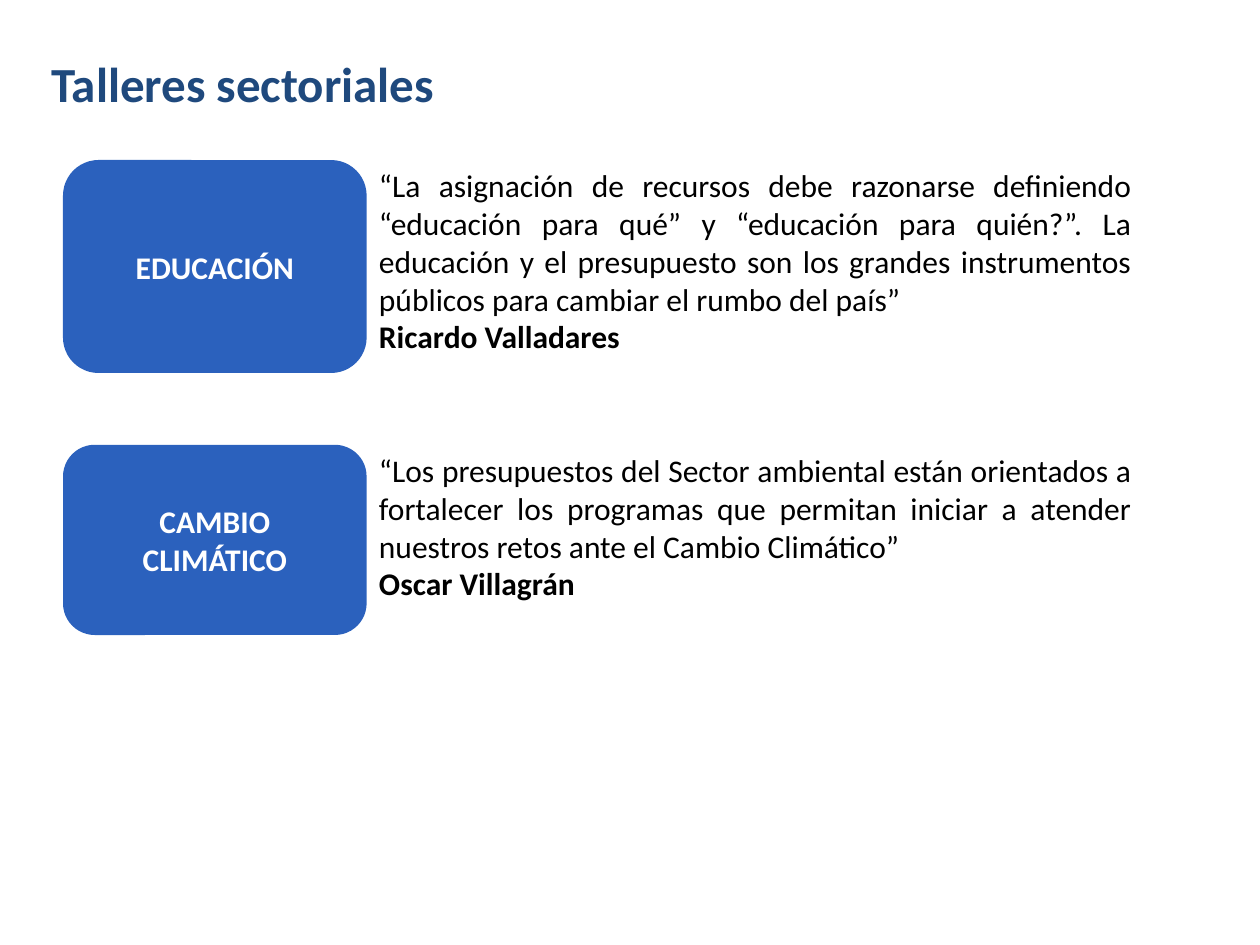
from dataclasses import dataclass

from pptx import Presentation
from pptx.dml.color import RGBColor
from pptx.enum.shapes import MSO_SHAPE
from pptx.enum.text import MSO_ANCHOR, MSO_AUTO_SIZE, PP_ALIGN
from pptx.util import Inches, Pt

ROUNDED = MSO_SHAPE.ROUNDED_RECTANGLE
MIDDLE, TOP = MSO_ANCHOR.MIDDLE, MSO_ANCHOR.TOP
LEFT, CENTER, JUSTIFY = PP_ALIGN.LEFT, PP_ALIGN.CENTER, PP_ALIGN.JUSTIFY
GROW = MSO_AUTO_SIZE.SHAPE_TO_FIT_TEXT


@dataclass(frozen=True)
class Theme:
    font: str = "Calibri"
    title_color: RGBColor = RGBColor(0x1F, 0x49, 0x7D)
    sector_fill: RGBColor = RGBColor(0x2B, 0x61, 0xBD)
    sector_text: RGBColor = RGBColor(0xFF, 0xFF, 0xFF)
    quote_color: RGBColor = RGBColor(0, 0, 0)
    title_size: Pt = Pt(28)
    body_size: Pt = Pt(18)


THEME = Theme()
SECTOR_LEFT, SECTOR_WIDTH = 0.5, 2.41
QUOTE_LEFT, QUOTE_WIDTH = SECTOR_LEFT + SECTOR_WIDTH, 6.17

WORKSHOPS = [
    {
        "sector": "EDUCACIÓN",
        "top": 1.27,
        "sector_height": 1.69,
        "quote_height": 1.62,
        "quote": "“La asignación de recursos debe razonarse definiendo "
                 "“educación para qué” y “educación para quién?”. La educación "
                 "y el presupuesto son los grandes instrumentos públicos para "
                 "cambiar el rumbo del país”",
        "speaker": "Ricardo Valladares",
    },
    {
        "sector": "CAMBIO CLIMÁTICO",
        "top": 3.53,
        "sector_height": 1.51,
        "quote_height": 1.31,
        "quote": "“Los presupuestos del Sector ambiental están orientados a "
                 "fortalecer los programas que permitan iniciar a atender "
                 "nuestros retos ante el Cambio Climático”",
        "speaker": "Oscar Villagrán",
    },
]


def write_text(shape, lines, size, color, alignment, anchor):
    frame = shape.text_frame
    frame.word_wrap = True
    frame.vertical_anchor = anchor
    frame.text = "\n".join(text for text, bold in lines)
    for paragraph, (text, bold) in zip(frame.paragraphs, lines):
        paragraph.alignment = alignment
        font = paragraph.runs[0].font
        font.color.rgb = color
        formats = {"name": THEME.font, "size": size, "bold": bold}
        for name, value in formats.items():
            setattr(font, name, value)


def add_title(slide, text):
    box = slide.shapes.add_textbox(
        Inches(0.31), Inches(0), Inches(5.21), Inches(1.32))
    write_text(box, [(text, True)], THEME.title_size, THEME.title_color,
               LEFT, MIDDLE)


def add_sector(slide, workshop):
    shape = slide.shapes.add_shape(
        ROUNDED, Inches(SECTOR_LEFT), Inches(workshop["top"]),
        Inches(SECTOR_WIDTH), Inches(workshop["sector_height"]))
    shape.shadow.inherit = False
    shape.fill.solid()
    shape.fill.fore_color.rgb = THEME.sector_fill
    shape.line.fill.background()
    write_text(shape, [(workshop["sector"], True)], THEME.body_size,
               THEME.sector_text, CENTER, MIDDLE)


def add_quote(slide, workshop):
    box = slide.shapes.add_textbox(
        Inches(QUOTE_LEFT), Inches(workshop["top"]),
        Inches(QUOTE_WIDTH), Inches(workshop["quote_height"]))
    lines = [(workshop["quote"], False), (workshop["speaker"], True)]
    write_text(box, lines, THEME.body_size, THEME.quote_color, JUSTIFY, TOP)
    box.text_frame.auto_size = GROW


def main():
    presentation = Presentation()
    presentation.slide_width = Inches(10)
    presentation.slide_height = Inches(7.5)
    slide = presentation.slides.add_slide(presentation.slide_layouts[6])
    add_title(slide, "Talleres sectoriales")
    for workshop in WORKSHOPS:
        add_sector(slide, workshop)
        add_quote(slide, workshop)
    presentation.save("out.pptx")


if __name__ == "__main__":
    main()
